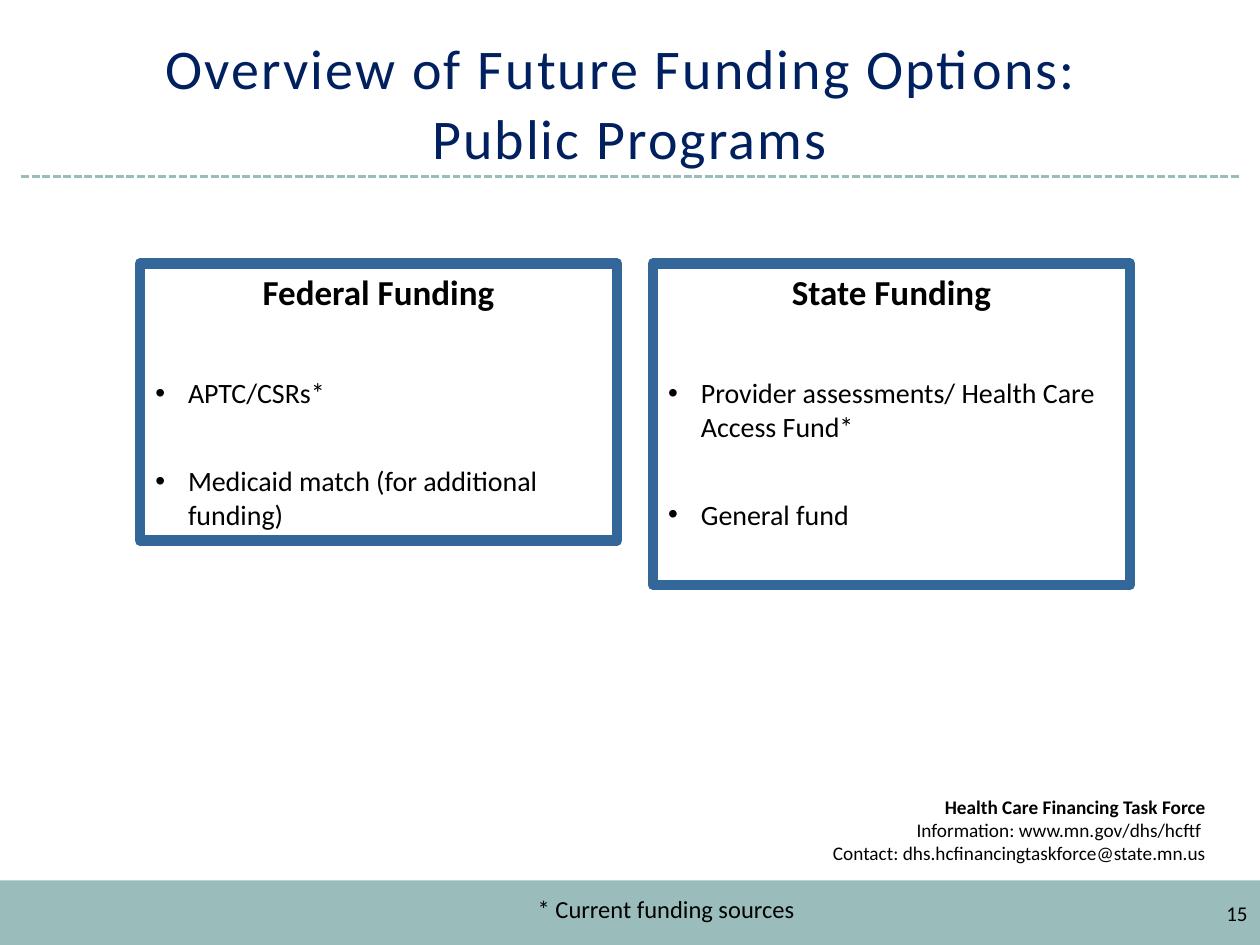
from lxml import etree
from pptx import Presentation
from pptx.dml.color import RGBColor
from pptx.enum import dml, shapes, text
from pptx.oxml.ns import qn
from pptx.util import Cm, Pt

NAVY = RGBColor(0x00, 0x20, 0x60)
BLUE = RGBColor(0x33, 0x66, 0x99)
SAGE = RGBColor(0x9A, 0xBC, 0xBB)
BLACK = RGBColor(0, 0, 0)
FONT = "Calibri"


def style(para, size, color=BLACK, bold=False, align=text.PP_ALIGN.LEFT):
    para.alignment = align
    for span in para.runs:
        span.font.name = FONT
        span.font.size = Pt(size)
        span.font.bold = bold
        span.font.color.rgb = color


def set_bullet(para, char=None):
    """Give the paragraph a hanging bullet, or none and no indent."""
    props = para._p.get_or_add_pPr()
    props.set("marL", str(Cm(0.97) if char else 0))
    props.set("indent", str(Cm(-0.66) if char else 0))
    if char:
        etree.SubElement(props, qn("a:buFont")).set("typeface", "Arial")
        etree.SubElement(props, qn("a:buChar")).set("char", char)
    else:
        etree.SubElement(props, qn("a:buNone"))


deck = Presentation()
deck.slide_width, deck.slide_height = Cm(25.4), Cm(19.05)
page = deck.slides.add_slide(deck.slide_layouts.get_by_name("Two Content"))
title, *panels = page.placeholders

# Footer band and dashed rule under the title
band = page.shapes.add_shape(shapes.MSO_SHAPE.RECTANGLE, 0, Cm(17.75), Cm(25.4), Cm(1.3))
band.shadow.inherit = False
band.fill.solid()
band.fill.fore_color.rgb = SAGE
band.line.fill.background()

rule = page.shapes.add_connector(
    shapes.MSO_CONNECTOR.STRAIGHT, Cm(0.43), Cm(3.56), Cm(24.97), Cm(3.56))
rule.line.color.rgb = SAGE
rule.line.width = Pt(1.5)
rule.line.dash_style = dml.MSO_LINE.SQUARE_DOT
etree.SubElement(rule._element.spPr, qn("a:effectLst"))

# Title
title.left, title.top, title.width, title.height = Cm(0.84), Cm(0.64), Cm(23.7), Cm(2.92)
frame = title.text_frame
frame.text = "Overview of Future Funding Options: \vPublic Programs"
frame.auto_size = text.MSO_AUTO_SIZE.NONE
frame.vertical_anchor = text.MSO_ANCHOR.BOTTOM
para = frame.paragraphs[0]
style(para, 32, NAVY, align=text.PP_ALIGN.CENTER)
para.line_spacing = Pt(40)
for span in para.runs:
    span.font._element.set("spc", "120")

# Funding panels: left, height, heading, bullets
funding = [
    (2.82, 5.59, "Federal Funding",
     ["APTC/CSRs*", "Medicaid match (for additional funding)"]),
    (13.16, 6.48, "State Funding",
     ["Provider assessments/ Health Care Access Fund*", "General fund"]),
]
for panel, (left, height, heading, items) in zip(panels, funding):
    panel.left, panel.top, panel.width, panel.height = Cm(left), Cm(5.31), Cm(9.62), Cm(height)
    panel.line.color.rgb = BLUE
    panel.line.width = Pt(6)
    frame = panel.text_frame
    frame.text = "\n".join([heading, *items])
    frame.auto_size = text.MSO_AUTO_SIZE.NONE
    frame.margin_left = frame.margin_right = 0
    frame.margin_top = frame.margin_bottom = Cm(0.15)
    head, *bullets = frame.paragraphs
    set_bullet(head)
    style(head, 20, bold=True, align=text.PP_ALIGN.CENTER)
    head.space_before, head.space_after = Pt(0), Pt(36)
    for para in bullets:
        set_bullet(para, "•")
        style(para, 16)
        para.space_before, para.space_after = Pt(0), Pt(31)

# Contact details, footnote and page number:
# left, top, width, height, size, alignment, anchor, lines
RIGHT, LEFT = text.PP_ALIGN.RIGHT, text.PP_ALIGN.LEFT
TOP, BOTTOM = text.MSO_ANCHOR.TOP, text.MSO_ANCHOR.BOTTOM
notes = [
    (11.53, 15.9, 13.03, 1.7, 11, RIGHT, TOP,
     ["Health Care Financing Task Force",
      "Information: www.mn.gov/dhs/hcftf ",
      "Contact: dhs.hcfinancingtaskforce@state.mn.us"]),
    (10.59, 17.98, 13.87, 0.76, 14, LEFT, BOTTOM, ["* Current funding sources"]),
    (19.48, 18.03, 5.92, 1.02, 12, RIGHT, TOP, ["15"]),
]
for left, top, width, height, size, align, anchor, lines in notes:
    box = page.shapes.add_textbox(Cm(left), Cm(top), Cm(width), Cm(height))
    frame = box.text_frame
    frame.word_wrap = True
    frame.vertical_anchor = anchor
    frame.text = "\n".join(lines)
    for number, para in enumerate(frame.paragraphs):
        style(para, size, bold=len(lines) > 1 and number == 0, align=align)

deck.save("out.pptx")
